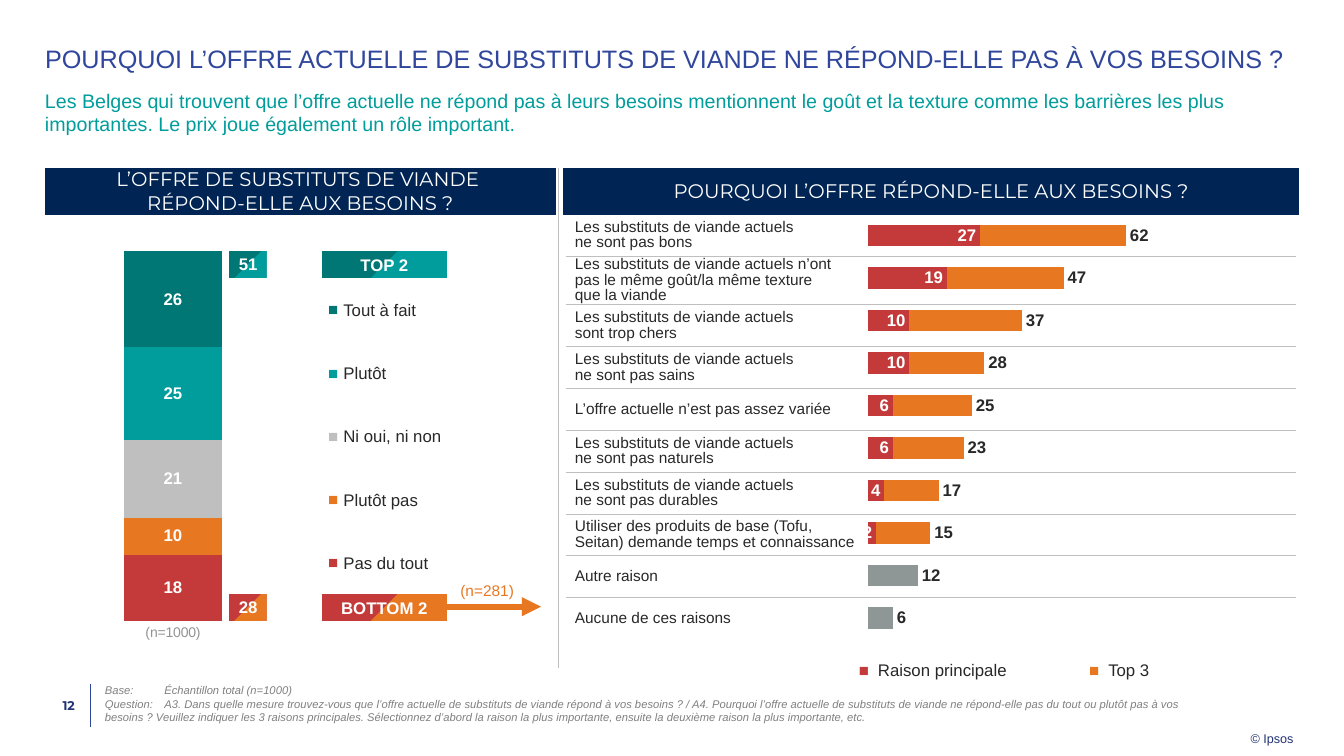
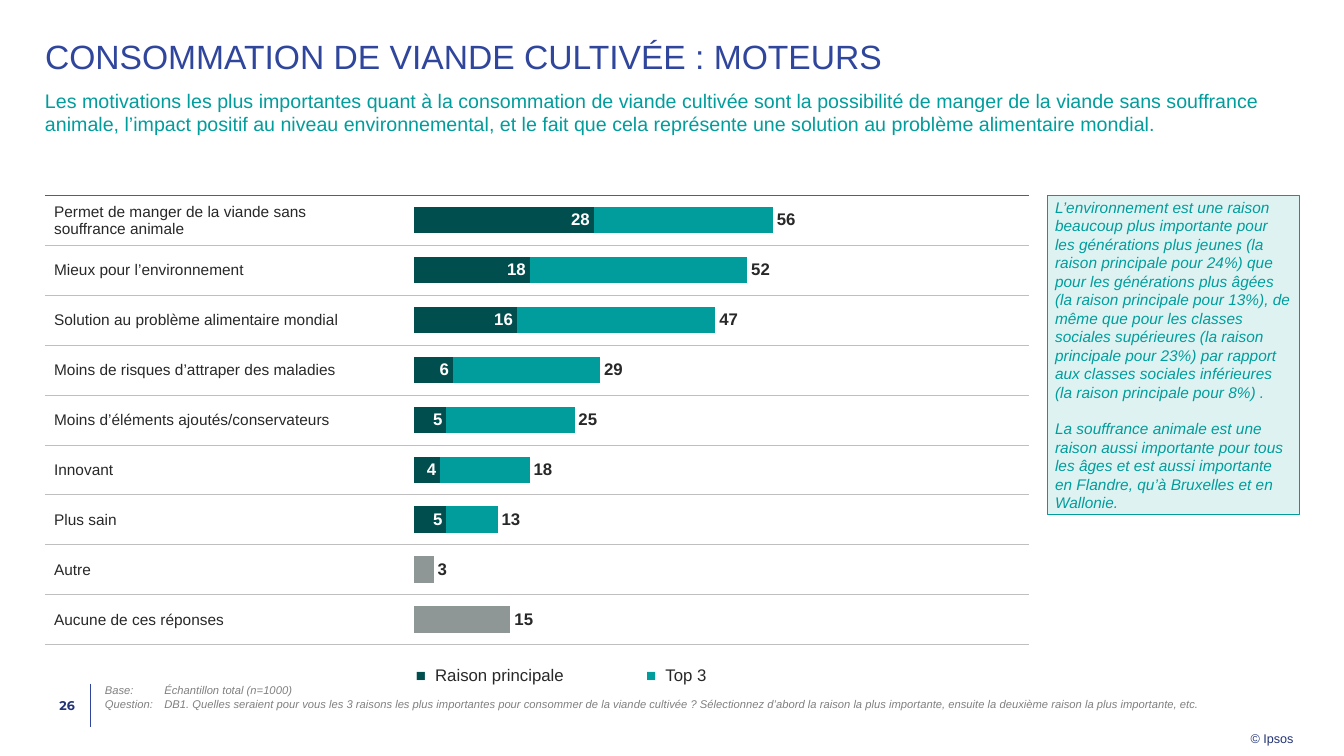
from lxml import etree
from pptx import Presentation
from pptx.chart.data import CategoryChartData
from pptx.dml.color import RGBColor
from pptx.enum.chart import XL_AXIS_CROSSES, XL_CHART_TYPE, XL_LABEL_POSITION, XL_TICK_LABEL_POSITION, XL_TICK_MARK
from pptx.enum.shapes import MSO_CONNECTOR, MSO_SHAPE
from pptx.enum.text import MSO_ANCHOR, PP_ALIGN
from pptx.oxml.ns import qn
from pptx.util import Inches, Pt

LEFT, MID, RIGHT = PP_ALIGN.LEFT, PP_ALIGN.CENTER, PP_ALIGN.RIGHT
TOP, CENTER = MSO_ANCHOR.TOP, MSO_ANCHOR.MIDDLE
RECT, LINE = MSO_SHAPE.RECTANGLE, MSO_CONNECTOR.STRAIGHT
STACK, BARS = XL_CHART_TYPE.COLUMN_STACKED, XL_CHART_TYPE.BAR_CLUSTERED
OUT, IN = XL_LABEL_POSITION.OUTSIDE_END, XL_LABEL_POSITION.INSIDE_END
BARE, NEAR = XL_TICK_LABEL_POSITION.NONE, XL_TICK_LABEL_POSITION.NEXT_TO_AXIS
NOTICK, MAXIMUM = XL_TICK_MARK.NONE, XL_AXIS_CROSSES.MAXIMUM

WIDE, HIGH = Inches(13.33), Inches(7.5)
COL, ROW = WIDE / 100, HIGH / 60
FACE, HEAD = "Arial", "Montserrat"
BLUE, NAVY, INK = "2F469C", "002554", "233475"
TEXT, GREY, RULE, WHITE = "282828", "808080", "BFBFBF", "FFFFFF"
DARK, GREEN, TEAL, PALE = "004E4E", "007675", "009D9C", "DEF2F2"
RED, ORANGE, ASH, STEEL, SMOKE = "C43A3A", "E87722", "8E9696", "5E5E5E", "939393"
PLAIN = "{2D5ABB26-0587-4C30-8999-92F81FD0307C}"
MARK = "■"

MEAT = "Les substituts de viande actuels"
SCALE = [("Tout à fait", 26, GREEN), ("Plutôt", 25, TEAL), ("Ni oui, ni non", 21, RULE),
         ("Plutôt pas", 10, ORANGE), ("Pas du tout", 18, RED)]
SUMS = [(1.3, "51", "TOP 2", GREEN, TEAL), (28.5, "28", "BOTTOM 2", RED, ORANGE)]
HURDLES = [
    (f"{MEAT}\nne sont pas bons", 62, 27),
    (f"{MEAT} n’ont pas le même goût/la même texture\nque la viande", 47, 19),
    (f"{MEAT}\nsont trop chers", 37, 10), (f"{MEAT}\nne sont pas sains", 28, 10),
    ("L’offre actuelle n’est pas assez variée", 25, 6),
    (f"{MEAT}\nne sont pas naturels", 23, 6), (f"{MEAT}\nne sont pas durables", 17, 4),
    ("Utiliser des produits de base (Tofu, Seitan) demande temps et connaissance", 15, 2),
    ("Autre raison", 12, None), ("Aucune de ces raisons", 6, None)]
DRIVERS = [
    ("Permet de manger de la viande sans\nsouffrance animale", 56, 28),
    ("Mieux pour l’environnement", 52, 18), ("Solution au problème alimentaire mondial", 47, 16),
    ("Moins de risques d’attraper des maladies", 29, 6), ("Moins d’éléments ajoutés/conservateurs", 25, 5),
    ("Innovant", 18, 4), ("Plus sain", 13, 5), ("Autre", 3, None), ("Aucune de ces réponses", 15, None)]

def paint(fill, hue):
    """Fill with one colour."""
    fill.solid()
    fill.fore_color.rgb = rgb(hue)

def rgb(hue):
    """Turn a hex string into a colour."""
    return RGBColor.from_string(hue)

def part(box, x, y, w, h):
    """Give a box offset from the corner of another, in columns and rows."""
    return box[0] + x, box[1] + y, w, h

def emu(box):
    """Turn columns and rows into slide lengths."""
    return [round(size * unit) for size, unit in zip(box, (COL, ROW, COL, ROW))]

def node(parent, tag, **attrs):
    """Append an XML element."""
    return etree.SubElement(parent, qn(tag), **attrs)

def style(font, size, hue, bold=False, italic=False, face=FACE):
    """Style a font."""
    font.size, font.name, font.bold, font.italic = Pt(size), face, bold, italic
    font.color.rgb = rgb(hue)

def write(host, text, size, hue, align=LEFT, anchor=TOP, pad=(0, 0, 0, 0), lead=None, tab=None, gap=0, **look):
    """Write styled paragraphs into a text frame or a table cell."""
    frame = getattr(host, "text_frame", host)
    frame.text = text
    host.vertical_anchor = anchor
    host.margin_left, host.margin_top, host.margin_right, host.margin_bottom = map(Inches, pad)
    for i, para in enumerate(frame.paragraphs):
        para.alignment, para.line_spacing = align, lead
        if i and gap:
            para.space_before = Pt(gap)
        if tab:
            stops = node(para._p.get_or_add_pPr(), "a:tabLst")
            node(stops, "a:tab", pos=str(Inches(tab)), algn="l")
        style(para.font, size, hue, **look)

def label(slide, box, text, size, hue, wrap=True, **look):
    """Add a text box."""
    frame = slide.shapes.add_textbox(*emu(box)).text_frame
    frame.word_wrap = wrap
    write(frame, text, size, hue, **look)

def panel(slide, box):
    """Add a rectangle without shadow."""
    shape = slide.shapes.add_shape(RECT, *emu(box))
    shape.shadow.inherit = False
    shape.text_frame.word_wrap = True
    return shape

def chip(slide, box, hues):
    """Add a rectangle split diagonally between two colours."""
    shape = panel(slide, box)
    shape.line.fill.background()
    shape.fill.gradient()
    shape.fill.gradient_angle = 315
    for stop, hue in zip(shape.fill.gradient_stops, hues):
        stop.position, stop.color.rgb = 0.5, rgb(hue)
    return shape

def rule(slide, box, hue, width, arrow=False):
    """Draw a straight line across a box."""
    x, y, w, h = emu(box)
    line = slide.shapes.add_connector(LINE, x, y, x + w, y + h)
    line.line.color.rgb, line.line.width = rgb(hue), Pt(width)
    if arrow:
        node(line.line._get_or_add_ln(), "a:tailEnd", type="triangle")
    node(line.element.spPr, "a:effectLst")

def grid(slide, box, cols, rows):
    """Add a plain table whose columns and rows share the box by weight."""
    x, y, w, h = emu(box)
    frame = slide.shapes.add_table(len(rows), len(cols), x, y, w, h)
    frame.element.xpath(".//a:tableStyleId")[0].text = PLAIN
    table = frame.table
    table.first_row = table.horz_banding = False
    for col, share in zip(table.columns, cols):
        col.width = round(w * share / sum(cols))
    for row, share in zip(table.rows, rows):
        row.height = round(h * share / sum(rows))
    return table

def finish(cell, edges=(), hue=None):
    """Set the borders of a cell, then its fill."""
    for side, tint, width in edges:
        line = node(cell._tc.get_or_add_tcPr(), f"a:ln{side}", w=str(Pt(width)))
        node(node(line, "a:solidFill"), "a:srgbClr", val=tint)
    if hue:
        paint(cell.fill, hue)
    else:
        cell.fill.background()

def graph(slide, box, kind, cats, series, gap, area):
    """Add a bare chart; series hold values, colour, label colour, place and format."""
    data = CategoryChartData()
    data.categories = cats
    for i, item in enumerate(series, 1):
        data.add_series(f"Series {i}", item[0])
    chart = slide.shapes.add_chart(kind, *emu(box), data).chart
    chart.has_legend = chart.has_title = False
    style(chart.font, 10, SMOKE)
    plot = chart.plots[0]
    plot.gap_width, plot.overlap, plot.vary_by_categories = gap, 100, False
    for line, (_, hue, ink, spot, form) in zip(plot.series, series):
        paint(line.format.fill, hue)
        tags = line.data_labels
        tags.show_value, tags.number_format, tags.number_format_is_linked = True, form, False
        if spot is not None:
            tags.position = spot
        style(tags.font, 12, ink, bold=True)
    for axis in (chart.category_axis, chart.value_axis):
        axis.has_major_gridlines = False
        axis.major_tick_mark = axis.minor_tick_mark = NOTICK
        axis.tick_label_position = BARE
        axis.format.line.fill.background()
    chart.value_axis.minimum_scale, chart.value_axis.maximum_scale = 0, 100
    home = chart._chartSpace.xpath(".//c:plotArea")[0]
    for old in home.findall(qn("c:layout")):
        home.remove(old)
    home.insert(0, etree.Element(qn("c:layout")))
    form = node(home[0], "c:manualLayout")
    rules = [("layoutTarget", "inner"), ("xMode", "edge"), ("yMode", "edge"), *zip("xywh", area)]
    for tag, val in rules:
        node(form, f"c:{tag}", val=str(val))
    return chart

def legend(slide, box, hues):
    """Add the key of the two bar series."""
    table = grid(slide, box, [2, 1], [1])
    for cell, name, hue in zip(table.rows[0].cells, ("Raison principale", "Top 3"), hues):
        write(cell, MARK, 12, TEXT, anchor=CENTER, pad=(0.04, 0, 0.04, 0), tab=0.19)
        para = cell.text_frame.paragraphs[0]
        para.runs[0].font.color.rgb = rgb(hue)
        para.add_run().text = f"\t{name}"
        finish(cell)

def ranking(slide, box, rows, split, bars, key, hues, gap, lead=None, frame=None, tall=None):
    """Add ruled reasons with overlapping bars and their key."""
    w, h = box[2:]
    last = len(rows) - 1
    table = grid(slide, box, [split, w - split], [1.16 if i == tall else 1 for i in range(last + 1)])
    for i, row in enumerate(rows):
        edges = [("T", frame, 1)] if frame and not i else []
        if frame or i < last:
            edges.append(("B", RULE, 0.25))
        write(table.cell(i, 0), row[0], 11, TEXT, anchor=CENTER, pad=(0.09, 0.01, 0.01, 0), lead=lead)
        for cell in table.rows[i].cells:
            finish(cell, edges)
    main, top = hues
    _, tops, mains = zip(*rows)
    series = [(tops, top, TEXT, OUT, "0"), (mains, main, WHITE, IN, "0;0;")]
    cats = [str(i + 1) for i in range(last + 1)]
    chart = graph(slide, part(box, bars[0], 0, bars[1], h), BARS, cats, series, gap, (0.01, 0, 0.97, 1))
    chart.category_axis.reverse_order = True
    for i, val in enumerate(mains):
        if val is None:
            paint(chart.plots[0].series[0].points[i].format.fill, ASH)
    legend(slide, part(box, key, h + 0.95, 25.7, 3.1), hues)

def opinion(slide, box):
    """Add the stacked column, its totals and its scale."""
    series = [([val], hue, WHITE, None, "0;0;") for _, val, hue in SCALE]
    chart = graph(slide, part(box, 0, -0.1, 19.05, 34.95), STACK, ["(n=1000)"], series, 160, (0, 0.04, 1, 0.84))
    chart.value_axis.reverse_order, chart.value_axis.crosses = True, MAXIMUM
    chart.category_axis.tick_label_position = NEAR
    style(chart.category_axis.tick_labels.font, 10, SMOKE)
    table = grid(slide, part(box, 19.8, 3.45, 17.1, 25.1), [0.31, 1.97], [1] * len(SCALE))
    for row, (name, _, hue) in zip(table.rows, SCALE):
        mark, word = row.cells
        write(mark, MARK, 12, hue, align=RIGHT, anchor=CENTER, pad=(0.04, 0, 0.04, 0))
        write(word, name, 12, TEXT, anchor=CENTER, pad=(0.01, 0.01, 0.01, 0))
        finish(mark)
        finish(word)
    for y, total, name, *hues in SUMS:
        chip(slide, part(box, 13.7, y, 2.8, 2.1), hues)
        cell = grid(slide, part(box, 5.6, y, 19.05, 2.1), [1], [1]).cell(0, 0)
        finish(cell)
        head = chip(slide, part(box, 20.6, y, 9.3, 2.1), hues)
        for host, text in ((cell, total), (head.text_frame, name)):
            write(host, text, 12, WHITE, align=MID, anchor=CENTER, bold=True)
    label(slide, part(box, 30.9, 27.5, 6.2, 1.5), "(n=281)", 11, ORANGE)
    rule(slide, part(box, 29.9, 29.5, 7, 0), ORANGE, 4.5, arrow=True)

def banner(slide, box, left, right):
    """Add the dark band of two headings above an empty row."""
    table = grid(slide, box, [5.15, 2.46, 2.46, 2.46], [0.47, 0.39])
    table.cell(0, 1).merge(table.cell(0, 3))
    for cell in table.iter_cells():
        finish(cell)
    for i, text in enumerate((left, right)):
        write(table.cell(0, i), text, 14, WHITE, align=MID, anchor=CENTER, face=HEAD)
    for cell in table.rows[0].cells:
        finish(cell, [("L", WHITE, 6), ("R", WHITE, 6)])
        props = cell._tc.get_or_add_tcPr()
        props.append(props[0])
        paint(cell.fill, NAVY)

def note(slide, box, text):
    """Add the tinted comment box."""
    shape = panel(slide, box)
    paint(shape.fill, PALE)
    shape.line.color.rgb, shape.line.width = rgb(TEAL), Pt(0.5)
    write(shape.text_frame, text, 11, TEAL, anchor=CENTER, pad=(0.08, 0.04, 0.08, 0.04), gap=13, italic=True)

def page(deck, number, title, size, y, lede, ask):
    """Add a slide with its title, lede and footer."""
    slide = deck.slides.add_slide(deck.slide_layouts[6])
    label(slide, (3.35, y, 94, 3.4), title, size, BLUE, lead=0.9)
    label(slide, (3.35, 6.7, 93.3, 6.3), lede, 14, TEAL, pad=(0, 0.04, 0, 0))
    label(slide, (3.35, 54.25, 3.35, 3.45), number, 9, INK, align=RIGHT, anchor=CENTER,
          pad=(0, 0, 0.15, 0), bold=True, face=HEAD)
    rule(slide, (6.75, 54.25, 0, 3.45), BLUE, 0.5)
    base = f"Base:\tÉchantillon total (n=1000)\nQuestion:\t{ask}"
    label(slide, (7.8, 54.25, 81.75, 3.2), base, 8, GREY, tab=0.59, italic=True)
    label(slide, (93.05, 57.7, 3.2, 1.5), "© Ipsos", 9, INK, wrap=False, pad=(0, 0.04, 0, 0))
    return slide

def main():
    """Build and save the deck."""
    deck = Presentation()
    deck.slide_width, deck.slide_height = WIDE, HIGH
    slide = page(
        deck, "12", "POURQUOI L’OFFRE ACTUELLE DE SUBSTITUTS DE VIANDE NE RÉPOND-ELLE PAS À VOS BESOINS ?", 18, 3.7,
        "Les Belges qui trouvent que l’offre actuelle ne répond pas à leurs besoins mentionnent le goût et la texture comme les barrières les plus importantes. Le prix joue également un rôle important.",
        "A3. Dans quelle mesure trouvez-vous que l’offre actuelle de substituts de viande répond à vos besoins ? / A4. Pourquoi l’offre actuelle de substituts de viande ne répond-elle pas du tout ou plutôt pas à vos besoins ? Veuillez indiquer les 3 raisons principales. Sélectionnez d’abord la raison la plus importante, ensuite la deuxième raison la plus importante, etc.")
    banner(slide, (3.05, 13.3, 93.9, 6.9), "L’OFFRE DE SUBSTITUTS DE VIANDE \nRÉPOND-ELLE AUX BESOINS ?",
           "POURQUOI L’OFFRE RÉPOND-ELLE AUX BESOINS ?")
    opinion(slide, (3.35, 18.65, 37.8, 35))
    rule(slide, (41.55, 13.3, 0, 39.7), RULE, 0.5)
    ranking(slide, (42.1, 17, 54.3, 33.75), HURDLES, 21.8, (22.1, 32), 21.5, (RED, ORANGE), 100, lead=Pt(11), tall=1)
    slide = page(
        deck, "26", "CONSOMMATION DE VIANDE CULTIVÉE : MOTEURS", 24, 3.2,
        "Les motivations les plus importantes quant à la consommation de viande cultivée sont la possibilité de manger de la viande sans souffrance animale, l’impact positif au niveau environnemental, et le fait que cela représente une solution au problème alimentaire mondial.",
        "DB1. Quelles seraient pour vous les 3 raisons les plus importantes pour consommer de la viande cultivée ? Sélectionnez d’abord la raison la plus importante, ensuite la deuxième raison la plus importante, etc.")
    ranking(slide, (3.35, 15.5, 73.2, 35.65), DRIVERS, 28.35, (27, 49.1), 27.3, (DARK, TEAL), 90, frame=STEEL)
    note(slide, (77.9, 15.5, 18.8, 25.35),
         "L’environnement est une raison beaucoup plus importante pour les générations plus jeunes (la raison principale pour 24%) que pour les générations plus âgées (la raison principale pour 13%), de même que pour les classes sociales supérieures (la raison principale pour 23%) par rapport aux classes sociales inférieures (la raison principale pour 8%) .\n"
         "La souffrance animale est une raison aussi importante pour tous les âges et est aussi importante en Flandre, qu’à Bruxelles et en Wallonie.")
    deck.save("out.pptx")

if __name__ == "__main__":
    main()
